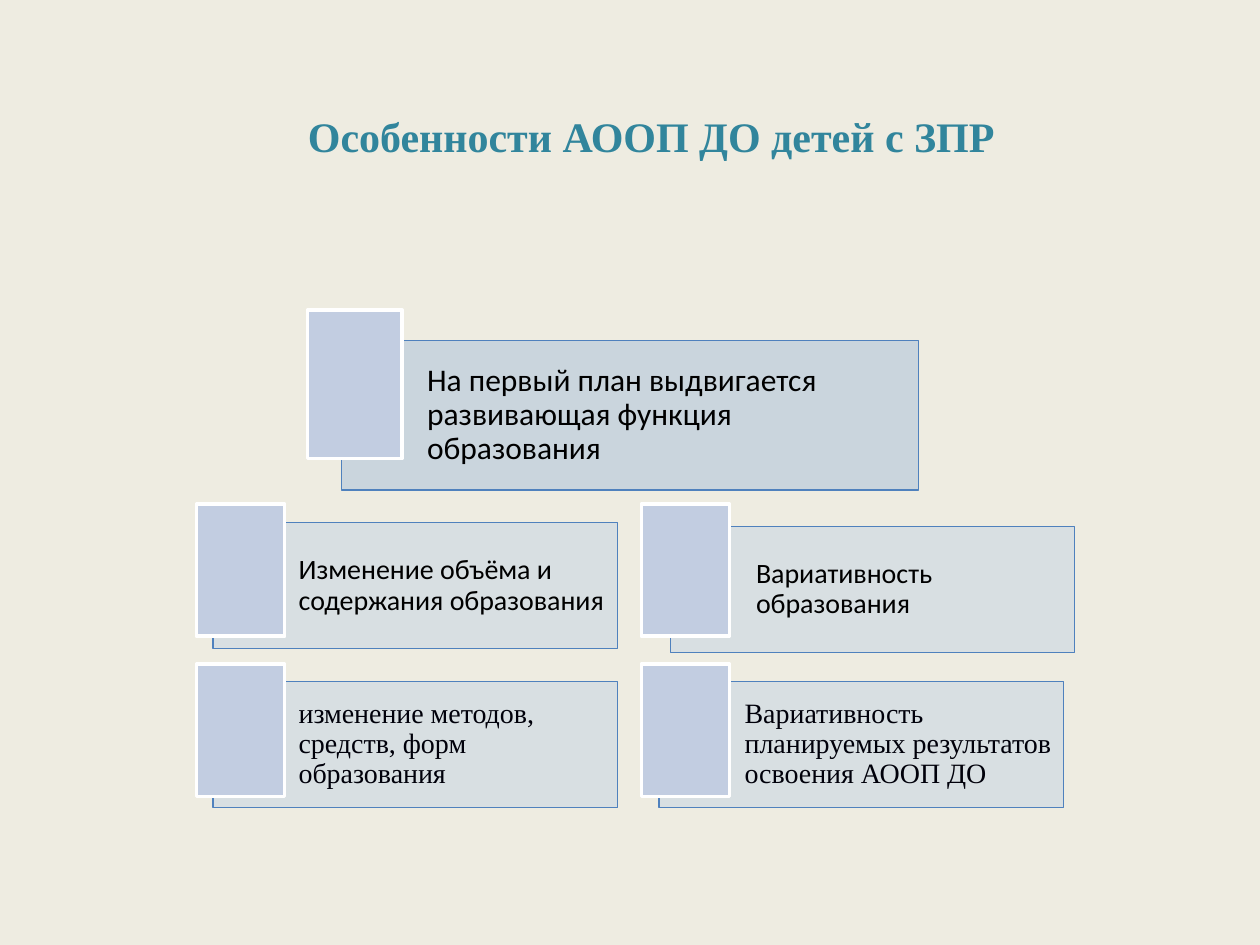
from lxml import etree
from pptx import Presentation
from pptx.dml.color import RGBColor
from pptx.enum.shapes import MSO_SHAPE
from pptx.enum.text import MSO_ANCHOR, PP_ALIGN
from pptx.oxml.ns import qn
from pptx.util import Inches, Pt

RECTANGLE = MSO_SHAPE.RECTANGLE
MIDDLE = MSO_ANCHOR.MIDDLE
LEFT, CENTER = PP_ALIGN.LEFT, PP_ALIGN.CENTER
SANS, SERIF = "Calibri", "Times New Roman"

TITLE = "Особенности АООП ДО детей с ЗПР"
MAIN = {"panel": (4.58, 1.19), "tab": (0.75, 1.18), "fill": "95B3D7", "size": 18}
DETAIL = {"panel": (3.21, 1), "tab": (0.7, 1.05), "fill": "B9CDE5", "size": 16}
CARDS = [
    ("На первый план выдвигается развивающая функция образования",
     MAIN, (2.71, 2.7), (2.44, 2.46), SANS, "000000"),
    ("Изменение объёма и содержания образования",
     DETAIL, (1.69, 4.15), (1.56, 4), SANS, "000000"),
    ("Вариативность образования",
     DETAIL, (5.32, 4.18), (5.09, 4), SANS, "000000"),
    ("изменение методов, средств, форм образования",
     DETAIL, (1.69, 5.41), (1.56, 5.27), SERIF, "00000A"),
    ("Вариативность планируемых результатов освоения АООП ДО",
     DETAIL, (5.23, 5.41), (5.09, 5.27), SERIF, "00000A"),
]


def color(value):
    return RGBColor.from_string(value)


def set_all(target, values):
    for name, value in values.items():
        setattr(target, name, value)


def write(frame, text, align, ink, font):
    set_all(frame, {"word_wrap": True, "vertical_anchor": MIDDLE})
    para = frame.paragraphs[0]
    para.alignment = align
    span = para.add_run()
    span.text = text
    set_all(span.font, font)
    span.font.color.rgb = color(ink)
    return para


def add_box(page, place, size, fill, line, width):
    box = page.shapes.add_shape(RECTANGLE, *map(Inches, place + size))
    box.shadow.inherit = False
    box.fill.solid()
    box.fill.fore_color.rgb = color(fill)
    box.line.color.rgb = color(line)
    box.line.width = Pt(width)
    return box


def set_opacity(box, percent):
    fill = box.fill._xPr.find(qn("a:solidFill"))
    etree.SubElement(fill[0], qn("a:alpha"), val=str(percent * 1000))


def add_card(page, text, style, panel_place, tab_place, font, ink):
    panel = add_box(page, panel_place, style["panel"], style["fill"], "4F81BD", 0.75)
    set_opacity(panel, 40)
    margin = Inches(0.07)
    set_all(panel.text_frame, {
        "margin_left": Inches(0.68), "margin_right": margin,
        "margin_top": margin, "margin_bottom": margin})
    para = write(panel.text_frame, text, LEFT, ink,
                 {"name": font, "size": Pt(style["size"])})
    para.line_spacing = 0.9
    add_box(page, tab_place, style["tab"], "C2CDE1", "FFFFFF", 2)


def main():
    deck = Presentation()
    set_all(deck, {"slide_width": Inches(10), "slide_height": Inches(7.5)})
    page = deck.slides.add_slide(deck.slide_layouts[5])
    page.background.fill.solid()
    page.background.fill.fore_color.rgb = color("EEECE1")

    title = page.shapes.title
    set_all(title, {"left": Inches(0.67), "top": Inches(0.68),
                    "width": Inches(9), "height": Inches(0.79)})
    write(title.text_frame, TITLE, CENTER, "31859C",
          {"name": SERIF, "size": Pt(24), "bold": True})

    for card in CARDS:
        add_card(page, *card)
    deck.save("out.pptx")


if __name__ == "__main__":
    main()
